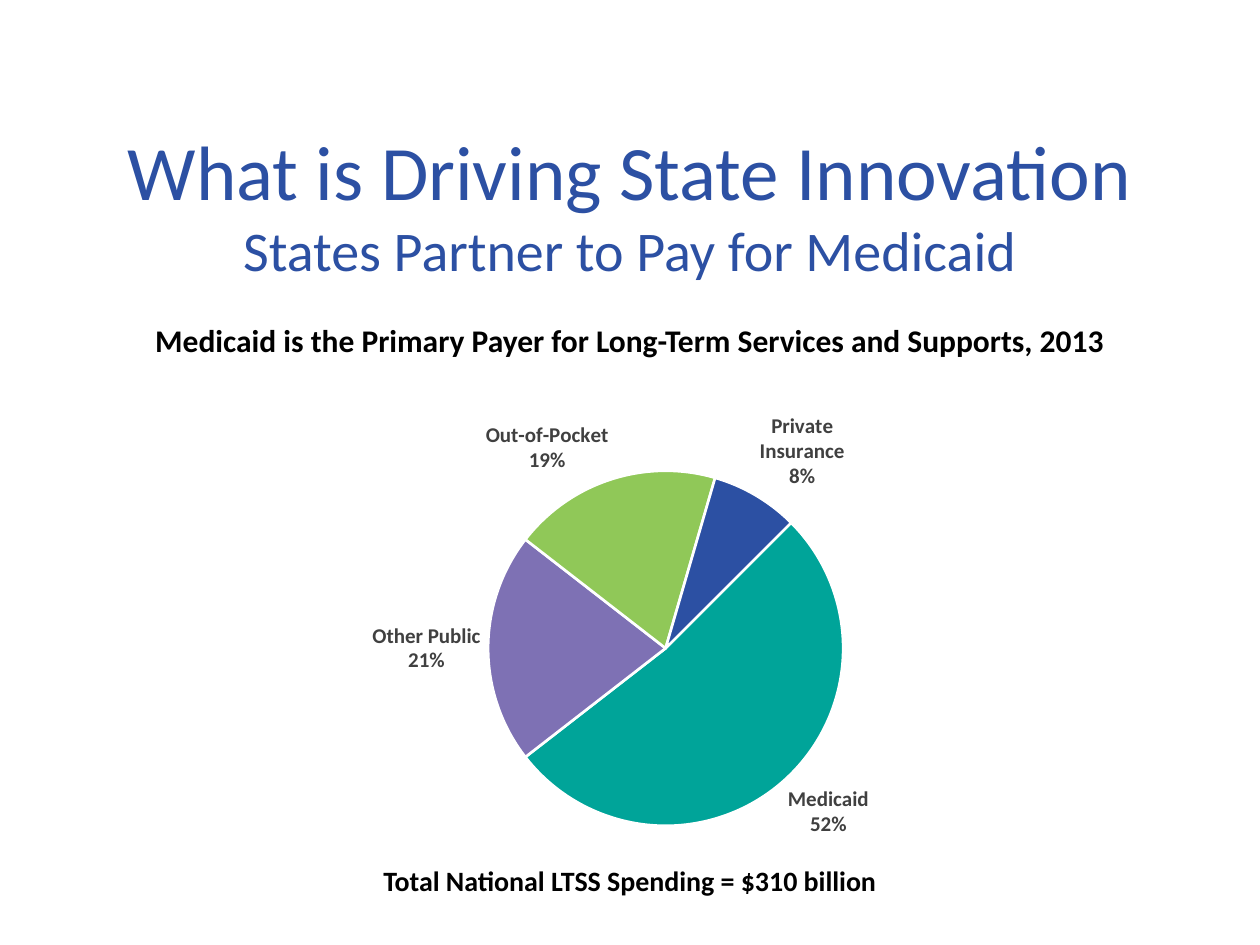
from lxml import etree
from pptx import Presentation
from pptx.chart.data import CategoryChartData
from pptx.dml.color import RGBColor
from pptx.enum.chart import XL_CHART_TYPE, XL_LABEL_POSITION
from pptx.enum.text import MSO_ANCHOR, PP_ALIGN
from pptx.oxml import parse_xml
from pptx.oxml.ns import nsdecls, qn
from pptx.util import Pt

PIE = XL_CHART_TYPE.PIE
OUTSIDE = XL_LABEL_POSITION.OUTSIDE_END
CENTER = PP_ALIGN.CENTER
MIDDLE = MSO_ANCHOR.MIDDLE

COLORS = {"blue": "2C50A3", "teal": "00A499", "purple": "7E71B4",
          "green": "90C858", "label": "404040", "black": "000000",
          "white": "FFFFFF"}
PAYERS = [("Medicaid", 52, "teal"), ("Other Public", 21, "purple"),
          ("Out-of-Pocket", 19, "green"), ("Private Insurance", 8, "blue")]
PLOT = {"x": 0.3, "y": 0.18, "w": 0.5, "h": 0.73}


def rgb(name):
    return RGBColor.from_string(COLORS[name])


def format_font(font, color, **values):
    font.color.rgb = rgb(color)
    for name, value in {"name": "Calibri", **values}.items():
        setattr(font, name, value)


def add_title(s, lines):
    """Fill the title with one (text, size) pair per line."""
    title = s.shapes.title
    title.left, title.top, title.width, title.height = Pt(36), Pt(64), Pt(648), Pt(104)
    tf = title.text_frame
    tf.vertical_anchor = MIDDLE
    p = tf.paragraphs[0]
    p.alignment = CENTER
    for i, (text, size) in enumerate(lines):
        if i:
            p.add_line_break()
        r = p.add_run()
        r.text = text
        format_font(r.font, "blue", size=Pt(size))


def add_caption(s, text, top, height, size):
    tf = s.shapes.add_textbox(Pt(75), Pt(top), Pt(570), Pt(height)).text_frame
    tf.word_wrap = True
    p = tf.paragraphs[0]
    p.alignment = CENTER
    r = p.add_run()
    r.text = text
    format_font(r.font, "black", size=Pt(size), bold=True)


def set_plot_layout(chart):
    """Fix the inner plot area as fractions of the chart frame."""
    area = chart._chartSpace.chart.plotArea
    for old in area.findall(qn("c:layout")):
        area.remove(old)
    layout = parse_xml(f"<c:layout {nsdecls('c')}><c:manualLayout/></c:layout>")
    values = {"layoutTarget": "inner", "xMode": "edge", "yMode": "edge", **PLOT}
    for tag, value in values.items():
        etree.SubElement(layout[0], qn(f"c:{tag}")).set("val", str(value))
    area.insert(0, layout)


def add_payer_pie(s):
    data = CategoryChartData()
    data.categories = [name for name, _, _ in PAYERS]
    data.add_series("Series 1", [share for _, share, _ in PAYERS])
    chart = s.shapes.add_chart(PIE, Pt(156), Pt(219), Pt(408), Pt(278), data).chart
    chart.has_legend = False
    chart.has_title = False
    format_font(chart.font, "black", name="Arial", size=Pt(10))
    set_plot_layout(chart)

    plot = chart.plots[0]
    plot.vary_by_categories = True
    angle = plot._element.find(qn("c:firstSliceAng"))
    if angle is None:
        angle = etree.SubElement(plot._element, qn("c:firstSliceAng"))
    angle.set("val", "45")

    series = plot.series[0]
    for i, (_, _, color) in enumerate(PAYERS):
        fmt = series.points[i].format
        fmt.fill.solid()
        fmt.fill.fore_color.rgb = rgb(color)
        fmt.line.color.rgb = rgb("white")
        fmt.line.width = Pt(1.5)

    labels = series.data_labels
    values = {"show_category_name": True, "show_percentage": True,
              "show_value": False, "show_legend_key": False,
              "number_format": "0%", "number_format_is_linked": False,
              "position": OUTSIDE}
    for name, value in values.items():
        setattr(labels, name, value)
    format_font(labels.font, "label", size=Pt(12), bold=True)
    separator = etree.Element(qn("c:separator"))
    separator.text = "\n"
    labels._element.find(qn("c:showBubbleSize")).addnext(separator)


def main():
    prs = Presentation()
    prs.slide_width, prs.slide_height = Pt(720), Pt(540)
    s = prs.slides.add_slide(prs.slide_layouts[5])
    add_title(s, [("What is Driving State Innovation", 44),
                  ("States Partner to Pay for Medicaid", 32)])
    add_payer_pie(s)
    add_caption(s, "Medicaid is the Primary Payer for Long-Term Services and "
                   "Supports, 2013", 180, 29, 18)
    add_caption(s, "Total National LTSS Spending = $310 billion", 490, 26, 16)
    prs.save("out.pptx")


if __name__ == "__main__":
    main()
